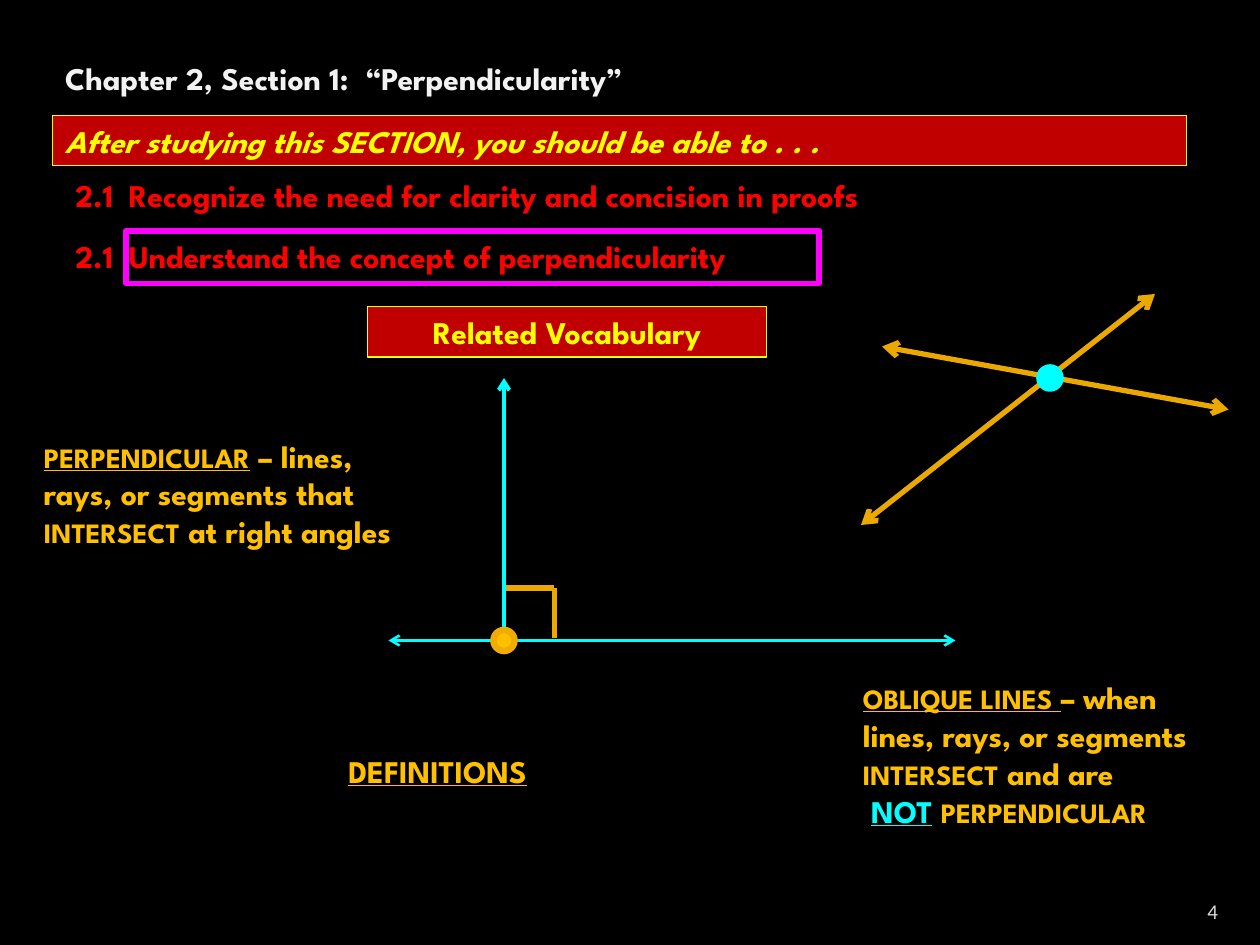
from typing import NamedTuple

import pptx
import pptx.dml.color
import pptx.enum.shapes
import pptx.enum.text
import pptx.oxml.ns
import pptx.util
from lxml import etree

# Grid: 120 columns by 90 rows on a 10 by 7.5 inch slide
WIDE, HIGH = pptx.util.Inches(10), pptx.util.Inches(7.5)
COLS, ROWS = 120, 90
BAR = 4.8
FACE = "League Spartan"
RED, DARK, YELLOW, PINK = "FF0000", "C00000", "FFFF00", "FF00FF"
GOLD, AMBER, CYAN = "FFC000", "EBA900", "00FFFF"

ALIGN = pptx.enum.text.PP_ALIGN
ANCHOR = pptx.enum.text.MSO_ANCHOR
FIT = pptx.enum.text.MSO_AUTO_SIZE
SHAPE = pptx.enum.shapes.MSO_SHAPE


class Box(NamedTuple):
    col: float
    row: float
    cols: float
    rows: float


class Run(NamedTuple):
    text: str
    size: float = 18
    color: str = GOLD
    under: bool = False


class Label(NamedTuple):
    box: Box
    lines: list
    tab: float = 0


class Line(NamedTuple):
    start: tuple
    end: tuple
    color: str
    width: float
    head: bool = False
    tail: bool = False


class Dot(NamedTuple):
    col: float
    row: float
    fill: str
    edge: str


def rgb(code: str):
    return pptx.dml.color.RGBColor.from_string(code)


def across(cols: float) -> int:
    return round(WIDE * cols / COLS)


def down(rows: float) -> int:
    return round(HIGH * rows / ROWS)


def place(box: Box) -> tuple:
    return across(box.col), down(box.row), across(box.cols), down(box.rows)


def add_tag(parent, name: str, **attrs):
    return etree.SubElement(parent, pptx.oxml.ns.qn(name), attrs)


def write(shape, lines: list, *, face=FACE, bold=True, italic=False,
          align=ALIGN.LEFT, anchor=ANCHOR.TOP, fit=FIT.SHAPE_TO_FIT_TEXT,
          tab=0) -> None:
    """Fill a shape with paragraphs, each a list of runs."""
    frame = shape.text_frame
    frame.word_wrap = True
    frame.auto_size = fit
    frame.vertical_anchor = anchor
    for index, runs in enumerate(lines):
        para = frame.add_paragraph() if index else frame.paragraphs[0]
        para.alignment = align
        if tab:
            tabs = add_tag(para._p.get_or_add_pPr(), "a:tabLst")
            add_tag(tabs, "a:tab", pos=str(across(tab)), algn="l")
        for item in runs:
            run = para.add_run()
            run.text = item.text
            font = run.font
            font.name, font.size = face, pptx.util.Pt(item.size)
            font.bold, font.italic, font.underline = bold, italic, item.under
            font.color.rgb = rgb(item.color)


def add_text(slide, box: Box, lines: list, **style) -> None:
    write(slide.shapes.add_textbox(*place(box)), lines, **style)


def add_form(slide, kind, box: Box, fill: str, edge: str, width: float):
    shape = slide.shapes.add_shape(kind, *place(box))
    shape.shadow.inherit = False
    if fill:
        shape.fill.solid()
        shape.fill.fore_color.rgb = rgb(fill)
    else:
        shape.fill.background()
    shape.line.color.rgb = rgb(edge)
    shape.line.width = pptx.util.Pt(width)
    return shape


def add_line(slide, line: Line) -> None:
    (left, top), (right, base) = line.start, line.end
    link = slide.shapes.add_connector(
        pptx.enum.shapes.MSO_CONNECTOR.STRAIGHT,
        across(left), down(top), across(right), down(base))
    link.line.color.rgb = rgb(line.color)
    link.line.width = pptx.util.Pt(line.width)
    stroke = link.line._get_or_add_ln()
    for name, shown in (("a:headEnd", line.head), ("a:tailEnd", line.tail)):
        if shown:
            add_tag(stroke, name, type="arrow")
    add_tag(link._element.spPr, "a:effectLst")


def add_dot(slide, dot: Dot) -> None:
    box = Box(dot.col - 1, dot.row - 1, 2, 2)
    add_form(slide, SHAPE.OVAL, box, dot.fill, dot.edge, 3.78)


LABELS = [
    # Objectives
    Label(Box(6, 16.2, 108, BAR), [[Run(
        "2.1\tRecognize the need for clarity and concision in proofs",
        color=RED)]], tab=5.1),
    Label(Box(6, 22, 108, BAR), [[Run(
        "2.1\tUnderstand the concept of perpendicularity",
        color=RED)]], tab=5.1),
    # Definitions
    Label(Box(32, 71, 20, BAR), [[Run("DEFINITIONS", under=True)]]),
    Label(Box(3, 41, 38, 12.1), [[
        Run("PERPENDICULAR", 16, under=True),
        Run(" – lines, rays, or segments that "),
        Run("INTERSECT", 16), Run(" at right angles")]]),
    Label(Box(81, 64, 36, 15.7), [
        [Run("OBLIQUE LINES", 16, under=True), Run(" ", under=True),
         Run("– when lines, rays, or segments "),
         Run("INTERSECT", 16), Run(" and are")],
        [Run(" ", color=CYAN), Run("NOT", color=CYAN, under=True),
         Run(" ", color=CYAN), Run("PERPENDICULAR", 16)]]),
]

LINES = [
    # Oblique pair
    Line((82, 50), (110, 28), AMBER, 3, True, True),
    Line((84, 33), (117, 39), AMBER, 3, True, True),
    # Right angle mark
    Line((48, 56), (52.8, 56), AMBER, 3),
    Line((52.8, 56), (52.8, 60.8), AMBER, 3),
    # Perpendicular pair
    Line((37, 61), (91, 61), CYAN, 1.5, True, True),
    Line((48, 61), (48, 36), CYAN, 2.25, tail=True),
]

DOTS = [Dot(100, 36, CYAN, CYAN), Dot(48, 61, GOLD, "F0AD00")]


def main() -> None:
    deck = pptx.Presentation()
    deck.slide_width, deck.slide_height = WIDE, HIGH
    slide = deck.slides.add_slide(deck.slide_layouts[5])
    slide.background.fill.solid()
    slide.background.fill.fore_color.rgb = rgb("000000")

    # Title
    title = slide.shapes.title
    title.left, title.top, title.width, title.height = place(
        Box(5, 5, 108, BAR))
    write(title, [[Run("Chapter 2, Section 1:  “Perpendicularity”",
                       color="F2F2F2")]])

    # Banners and the frame round the current objective
    goal = add_form(slide, SHAPE.RECTANGLE, Box(5, 11, 108, BAR),
                    DARK, YELLOW, 0.75)
    write(goal, [[Run("After studying this SECTION, you should be able to . . .",
                      color=YELLOW)]], italic=True)
    terms = add_form(slide, SHAPE.RECTANGLE, Box(35, 29.2, 38, BAR),
                     DARK, YELLOW, 0.75)
    write(terms, [[Run("Related Vocabulary", color=YELLOW)]],
          align=ALIGN.CENTER)
    add_form(slide, SHAPE.RECTANGLE, Box(12, 22, 66, 5), "", PINK, 3)

    # Text, then the two figures
    for label in LABELS:
        add_text(slide, label.box, label.lines, tab=label.tab)
    for line in LINES:
        add_line(slide, line)
    for dot in DOTS:
        add_dot(slide, dot)

    # Slide number
    add_text(slide, Box(107.6, 85, 9.6, 3.6), [[Run("4", 12, "D9D9D9")]],
             face="Calibri", bold=False, align=ALIGN.RIGHT,
             anchor=ANCHOR.BOTTOM, fit=FIT.NONE)
    deck.save("out.pptx")


if __name__ == "__main__":
    main()
